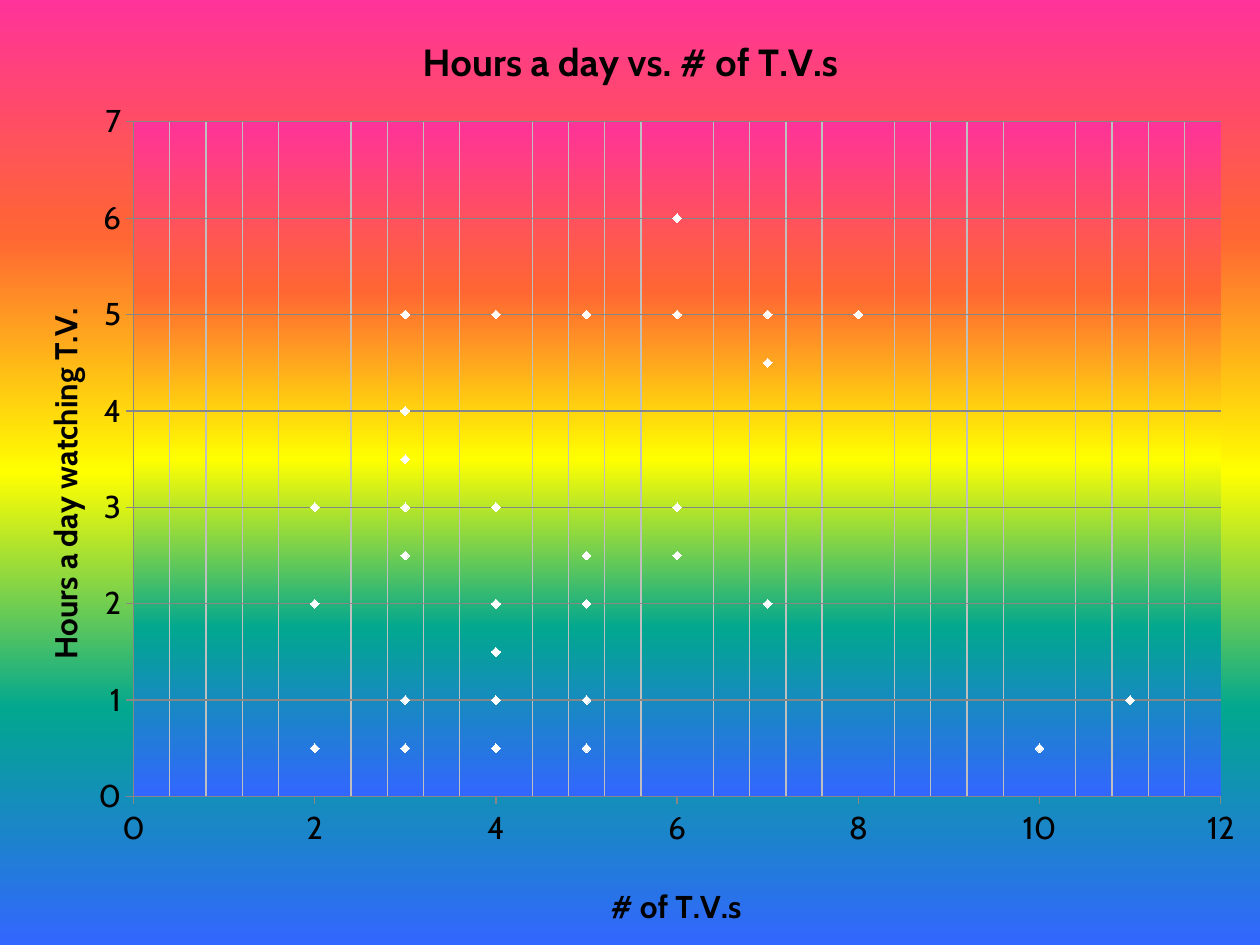
from pptx import Presentation
from pptx.chart.data import XyChartData
from pptx.dml.color import RGBColor
from pptx.enum.chart import XL_CHART_TYPE, XL_MARKER_STYLE, XL_TICK_MARK
from pptx.oxml import parse_xml
from pptx.oxml.ns import nsdecls
from pptx.util import Cm, Pt

COLORS = {
    "text": "000000",
    "axis": "878787",
    "minor_grid": "BFBFBF",
    "marker": "FFFFFF",
}
RAINBOW = {0: "FF3399", 25: "FF6633", 50: "FFFF00", 75: "01A78F", 100: "3366FF"}
FONT = "Cabin"
LINE_WIDTH = Pt(0.75)

TV_COUNTS = [4, 2, 4, 5, 2, 3, 6, 4, 4, 6, 5, 7, 3, 2, 3, 4, 6, 3, 3, 4,
             8, 10, 4, 3, 5, 3, 2, 5, 3, 5, 4, 4, 4, 11, 6, 7, 7, 3, 5, 3]
HOURS = [0.5, 3, 5, 2, 2, 5, 3, 1, 2, 2.5, 2.5, 5, 5, 3, 4, 1.5, 5, 5, 3, 1,
         5, 0.5, 1.5, 0.5, 2.5, 3.5, 0.5, 5, 2.5, 1, 2, 3, 0.5, 1, 6, 2, 4.5,
         4, 0.5, 1]


def color(name):
    return RGBColor.from_string(COLORS[name])


def rainbow_fill():
    """Chart shape properties with the top-to-bottom rainbow and no outline."""
    stops = "".join(
        f'<a:gs pos="{percent * 1000}"><a:srgbClr val="{rgb}"/></a:gs>'
        for percent, rgb in RAINBOW.items())
    return parse_xml(
        f'<c:spPr {nsdecls("c", "a")}><a:gradFill rotWithShape="0">'
        f'<a:gsLst>{stops}</a:gsLst><a:lin ang="5400000" scaled="0"/></a:gradFill>'
        '<a:ln><a:noFill/></a:ln></c:spPr>')


def manual_layout(x, y, size=None):
    """Layout in fractions of the chart; a size applies to the inner plot."""
    target = '<c:layoutTarget val="inner"/>' if size else ""
    extent = f'<c:w val="{size[0]}"/><c:h val="{size[1]}"/>' if size else ""
    return parse_xml(
        f'<c:layout {nsdecls("c")}><c:manualLayout>{target}'
        '<c:xMode val="edge"/><c:yMode val="edge"/>'
        f'<c:x val="{x}"/><c:y val="{y}"/>{extent}</c:manualLayout></c:layout>')


def write_title(title, text, size, x, y, rotation=0):
    title.text_frame.text = text
    font = title.text_frame.paragraphs[0].font
    font.name, font.size, font.bold = FONT, Pt(size), True
    font.color.rgb = color("text")
    title.element.xpath(".//a:bodyPr")[0].set("rot", str(rotation * 60000))
    for layout in title.element.xpath("c:layout"):
        title.element.remove(layout)
    title.element.xpath("c:tx")[0].addnext(manual_layout(x, y))


def style_line(line, name):
    line.color.rgb = color(name)
    line.width = LINE_WIDTH


def style_axis(axis, maximum, step):
    axis.minimum_scale, axis.maximum_scale = 0, maximum
    axis.major_unit = step
    axis.major_tick_mark = XL_TICK_MARK.OUTSIDE
    axis.minor_tick_mark = XL_TICK_MARK.NONE
    axis.tick_labels.number_format = "General"
    axis.tick_labels.number_format_is_linked = False
    style_line(axis.format.line, "axis")


def style_minor_gridlines(chart):
    for gridlines in chart.element.xpath(".//c:minorGridlines"):
        gridlines.append(parse_xml(
            f'<c:spPr {nsdecls("c", "a")}><a:ln w="{LINE_WIDTH}"><a:solidFill>'
            f'<a:srgbClr val="{COLORS["minor_grid"]}"/>'
            '</a:solidFill></a:ln></c:spPr>'))


def style_points(series):
    series.format.line.fill.background()
    marker = series.marker
    marker.style, marker.size = XL_MARKER_STYLE.DIAMOND, 5
    marker.format.fill.solid()
    marker.format.fill.fore_color.rgb = color("marker")
    marker.format.line.color.rgb = color("marker")


def add_scatter(slide, width, height):
    survey = XyChartData()
    points = survey.add_series("Series 1")
    for tv_count, hours in zip(TV_COUNTS, HOURS):
        points.add_data_point(tv_count, hours)
    chart = slide.shapes.add_chart(
        XL_CHART_TYPE.XY_SCATTER, 0, 0, width, height, survey).chart
    chart.has_legend = False
    chart.font.name, chart.font.size = FONT, Pt(18)
    chart.font.color.rgb = color("text")
    chart.plots[0].vary_by_categories = False
    style_points(chart.plots[0].series[0])
    return chart


def style_backgrounds(chart):
    chart.element.xpath("c:chart")[0].addnext(rainbow_fill())
    plot_area = chart.element.xpath("c:chart/c:plotArea")[0]
    for layout in plot_area.xpath("c:layout"):
        plot_area.remove(layout)
    plot_area.insert(0, manual_layout(0.106, 0.129, (0.863, 0.714)))
    plot_area.append(rainbow_fill())


def main():
    prs = Presentation()
    prs.slide_width, prs.slide_height = Cm(25.4), Cm(19.05)
    slide = prs.slides.add_slide(prs.slide_layouts[6])
    chart = add_scatter(slide, prs.slide_width, prs.slide_height)

    tv_axis, hours_axis = chart.category_axis, chart.value_axis
    style_axis(tv_axis, 12, 2)
    tv_axis.minor_unit = 0.4
    tv_axis.has_major_gridlines = False
    tv_axis.has_minor_gridlines = True
    style_minor_gridlines(chart)
    style_axis(hours_axis, 7, 1)
    hours_axis.has_major_gridlines = True
    style_line(hours_axis.major_gridlines.format.line, "axis")

    write_title(chart.chart_title, "Hours a day vs. # of T.V.s", 21.6, 0.33, 0.03)
    write_title(tv_axis.axis_title, "# of T.V.s", 18, 0.48, 0.93)
    write_title(hours_axis.axis_title, "Hours a day watching T.V.", 18,
                0.03, 0.32, rotation=-90)
    style_backgrounds(chart)
    prs.save("out.pptx")


if __name__ == "__main__":
    main()
